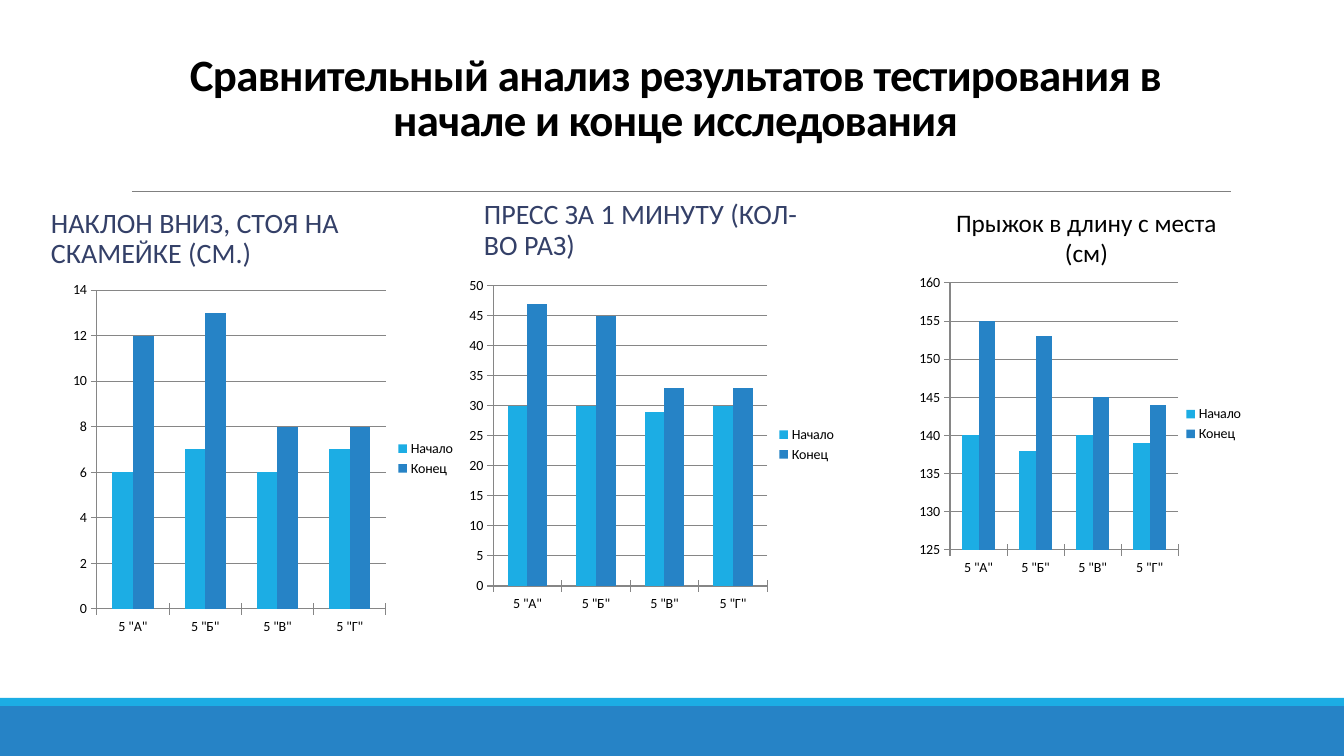
"""Builds a slide comparing test results at the start and end of a study."""
from lxml.etree import SubElement
from pptx import Presentation
from pptx.chart.data import CategoryChartData
from pptx.dml.color import RGBColor
from pptx.enum.chart import XL_CHART_TYPE, XL_LEGEND_POSITION, XL_TICK_MARK
from pptx.enum.shapes import MSO_CONNECTOR, MSO_SHAPE
from pptx.enum.text import MSO_ANCHOR, PP_ALIGN
from pptx.oxml.ns import qn
from pptx.util import Pt

THEME = {
    "font": "Calibri", "sky": "1CADE4", "blue": "2683C6", "navy": "344068",
    "black": "000000", "rule": "808080", "grid": "868686",
    "title": 32, "head": 20, "label": 18, "chart": 10,
}
WIDE, HIGH = 1344, 756
SCALE = 914400 / 100.8

BANDS = [((0, 706, WIDE, 50), "blue"), ((0, 698, WIDE, 8), "sky")]
RULE = (132, 191, 1231, 191)

TITLE = "Сравнительный анализ результатов тестирования в начале и конце исследования"
HEADS = [
    ("НАКЛОН ВНИЗ, СТОЯ НА СКАМЕЙКЕ (СМ.)", (41, 199, 348, 81)),
    ("ПРЕСС ЗА 1 МИНУТУ (КОЛ-ВО РАЗ)", (474, 195, 336, 72)),
]
LABEL = ("Прыжок в длину с места (см)", (937, 202, 299, 71))

GROUPS = ['5 "А"', '5 "Б"', '5 "В"', '5 "Г"']
SERIES = [("Начало", "sky"), ("Конец", "blue")]
CHARTS = [
    {"box": (66, 275, 400, 367), "plot": (97, 290, 289, 319), "axis": (0, 14, 2),
     "values": [(6, 7, 6, 7), (12, 13, 8, 8)]},
    {"box": (462, 271, 385, 347), "plot": (493, 286, 274, 300), "axis": (0, 50, 5),
     "values": [(30, 30, 29, 30), (47, 45, 33, 33)]},
    {"box": (886, 260, 368, 328), "plot": (950, 283, 228, 267), "axis": (125, 160, 5),
     "values": [(140, 138, 140, 139), (155, 153, 145, 144)]},
]


def emu(box):
    return [round(n * SCALE) for n in box]


def color(name):
    return RGBColor.from_string(THEME[name])


def add_text(slide, text, box, size, ink, anchor, align=PP_ALIGN.LEFT,
             lines=1.0, before=0, after=0, bold=False, track=0):
    frame = slide.shapes.add_textbox(*emu(box)).text_frame
    frame.word_wrap = True
    frame.vertical_anchor = anchor
    para = frame.paragraphs[0]
    para.alignment = align
    para.line_spacing = lines
    para.space_before, para.space_after = Pt(before), Pt(after)
    run = para.add_run()
    run.text = text
    run.font.name, run.font.size = THEME["font"], Pt(THEME[size])
    run.font.bold = bold
    run.font.color.rgb = color(ink)
    if track:
        run._r.get_or_add_rPr().set("spc", str(track))


def add_band(slide, box, fill):
    band = slide.shapes.add_shape(MSO_SHAPE.RECTANGLE, *emu(box))
    band.shadow.inherit = False
    band.fill.solid()
    band.fill.fore_color.rgb = color(fill)
    band.line.fill.background()


def add_rule(slide):
    rule = slide.shapes.add_connector(MSO_CONNECTOR.STRAIGHT, *emu(RULE))
    rule.line.color.rgb = color("rule")
    rule.line.width = Pt(0.5)
    SubElement(rule._element.spPr, qn("a:effectLst"))


def place_plot(chart, box, plot):
    area = chart._chartSpace.chart.plotArea
    for old in area.findall(qn("c:layout")):
        area.remove(old)
    layout = area.makeelement(qn("c:layout"), {})
    area.insert(0, layout)
    manual = SubElement(layout, qn("c:manualLayout"))
    left, top, width, height = box
    marks = [("layoutTarget", "inner"), ("xMode", "edge"), ("yMode", "edge"),
             ("x", round((plot[0] - left) / width, 3)),
             ("y", round((plot[1] - top) / height, 3)),
             ("w", round(plot[2] / width, 3)),
             ("h", round(plot[3] / height, 3))]
    for tag, value in marks:
        SubElement(manual, qn("c:" + tag), val=str(value))


def style_line(line):
    line.color.rgb = color("grid")
    line.width = Pt(0.75)


def add_bars(slide, item):
    data = CategoryChartData()
    data.categories = GROUPS
    for (name, _), values in zip(SERIES, item["values"]):
        data.add_series(name, values)
    chart = slide.shapes.add_chart(
        XL_CHART_TYPE.COLUMN_CLUSTERED, *emu(item["box"]), data).chart
    chart.has_title = False
    chart.font.name, chart.font.size = THEME["font"], Pt(THEME["chart"])
    chart.font.color.rgb = color("black")
    chart.has_legend = True
    chart.legend.position = XL_LEGEND_POSITION.RIGHT
    chart.legend.include_in_layout = False

    bars = chart.plots[0]
    bars.vary_by_categories = False
    bars.gap_width, bars.overlap = 150, 0
    for series, (_, fill) in zip(bars.series, SERIES):
        series.format.fill.solid()
        series.format.fill.fore_color.rgb = color(fill)

    for axis in (chart.category_axis, chart.value_axis):
        axis.major_tick_mark = XL_TICK_MARK.CROSS
        axis.minor_tick_mark = XL_TICK_MARK.NONE
        style_line(axis.format.line)
    scale = chart.value_axis
    scale.minimum_scale, scale.maximum_scale, scale.major_unit = item["axis"]
    scale.has_major_gridlines = True
    style_line(scale.major_gridlines.format.line)
    place_plot(chart, item["box"], item["plot"])


def main():
    deck = Presentation()
    deck.slide_width, deck.slide_height = emu((WIDE, HIGH))
    slide = deck.slides.add_slide(deck.slide_layouts[6])
    for box, fill in BANDS:
        add_band(slide, box, fill)
    add_rule(slide)
    add_text(slide, TITLE, (121, 31, 1109, 120), "title", "black", MSO_ANCHOR.BOTTOM,
             PP_ALIGN.CENTER, lines=0.85, bold=True, track=-50)
    for text, box in HEADS:
        add_text(slide, text, box, "head", "navy", MSO_ANCHOR.MIDDLE,
                 lines=0.9, before=12, after=2)
    for item in CHARTS:
        add_bars(slide, item)
    add_text(slide, *LABEL, "label", "black", MSO_ANCHOR.TOP, PP_ALIGN.CENTER)
    deck.save("out.pptx")


if __name__ == "__main__":
    main()
